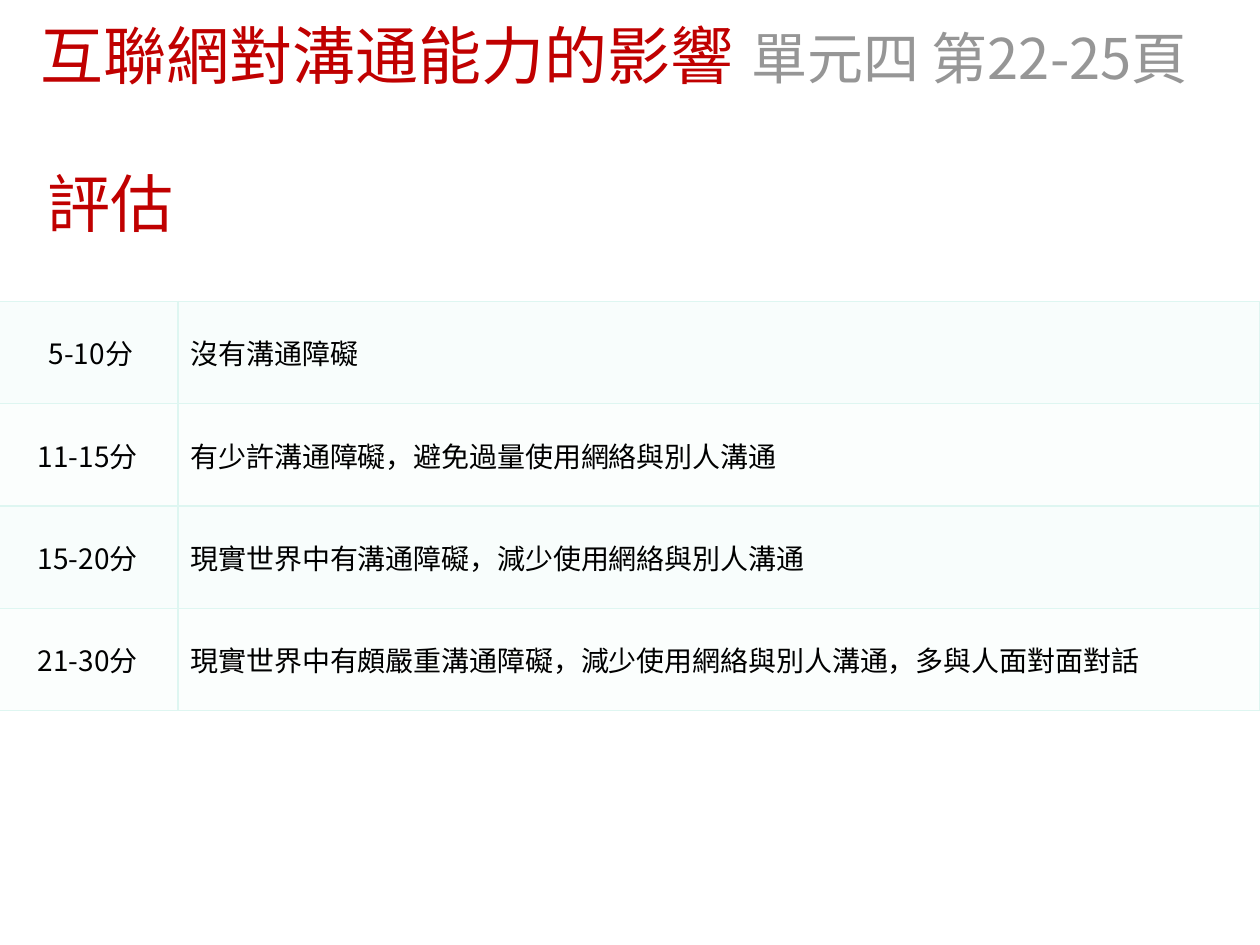
import pptx
import pptx.util
import pptx.dml.color
import pptx.enum.text
import pptx.oxml.ns
import lxml.etree

W, H = 10, 7.5
ARIAL, NOTO = "Arial", "Noto Sans CJK SC"
COLORS = {
    "red": "C00000",
    "gray": "969696",
    "black": "000000",
    "border": "DEF6F1",
    "band_dark": "F8FDFC",
    "band_light": "FBFEFD",
}
ROWS = [
    (" 5-10分", "沒有溝通障礙"),
    ("11-15分", "有少許溝通障礙，避免過量使用網絡與別人溝通"),
    ("15-20分", "現實世界中有溝通障礙，減少使用網絡與別人溝通"),
    ("21-30分", "現實世界中有頗嚴重溝通障礙，減少使用網絡與別人溝通，多與人面對面對話"),
]
ALIGN = pptx.enum.text.PP_ALIGN
MIDDLE = pptx.enum.text.MSO_ANCHOR.MIDDLE


def rgb(name):
    return pptx.dml.color.RGBColor.from_string(COLORS[name])


def box(x, y, w, h):
    """Turn shares of the slide's size into lengths."""
    return [pptx.util.Inches(v) for v in (x * W, y * H, w * W, h * H)]


def sub(parent, tag, **attrs):
    return lxml.etree.SubElement(parent, pptx.oxml.ns.qn(tag), attrs)


def add_run(p, text, size, font, color):
    r = p.add_run()
    r.text = text
    r.font.size = pptx.util.Pt(size)
    r.font.color.rgb = rgb(color)
    r.font.name = font
    sub(r.font._element, "a:ea", typeface=font)


def add_text(s, place, align, runs):
    tf = s.shapes.add_textbox(*box(*place)).text_frame
    tf.word_wrap = True
    tf.vertical_anchor = MIDDLE
    p = tf.paragraphs[0]
    p.alignment = align
    for run in runs:
        add_run(p, *run)


def add_borders(cell):
    tc_pr = cell._tc.get_or_add_tcPr()
    for i, side in enumerate(("a:lnL", "a:lnR", "a:lnT", "a:lnB")):
        ln = lxml.etree.Element(pptx.oxml.ns.qn(side), w=str(pptx.util.Pt(1)))
        sub(sub(ln, "a:solidFill"), "a:srgbClr", val=COLORS["border"])
        tc_pr.insert(i, ln)


def add_score_table(s, place, shares):
    x, y, w, h = box(*place)
    table = s.shapes.add_table(len(ROWS), len(shares), x, y, w, h).table
    table.first_row = False
    table.horz_banding = False
    for col, share in zip(table.columns, shares):
        col.width = int(w * share)
    for i, row in enumerate(ROWS):
        band = "band_light" if i % 2 else "band_dark"
        for j, text in enumerate(row):
            cell = table.cell(i, j)
            cell.fill.solid()
            cell.fill.fore_color.rgb = rgb(band)
            cell.vertical_anchor = MIDDLE
            p = cell.text_frame.paragraphs[0]
            p.alignment = ALIGN.LEFT if j else ALIGN.CENTER
            add_run(p, text, 16, NOTO, "black")
            add_borders(cell)


def main():
    prs = pptx.Presentation()
    prs.slide_width = pptx.util.Inches(W)
    prs.slide_height = pptx.util.Inches(H)
    s = prs.slides.add_slide(prs.slide_layouts[6])

    # Title with its page reference
    add_text(s, (-0.004, 0.007, 0.993, 0.101), ALIGN.CENTER, [
        ("互聯網對溝通能力的影響 ", 36, ARIAL, "red"),
        ("單元四 第22-25頁 ", 32, NOTO, "gray"),
    ])

    # Score bands and their meaning
    add_score_table(s, (-0.002, 0.319, 1.002, 0.433), (0.143, 0.857))

    # Section heading
    add_text(s, (0.028, 0.181, 0.834, 0.067), ALIGN.LEFT,
             [("評估", 36, NOTO, "red")])

    prs.save("out.pptx")


if __name__ == "__main__":
    main()
